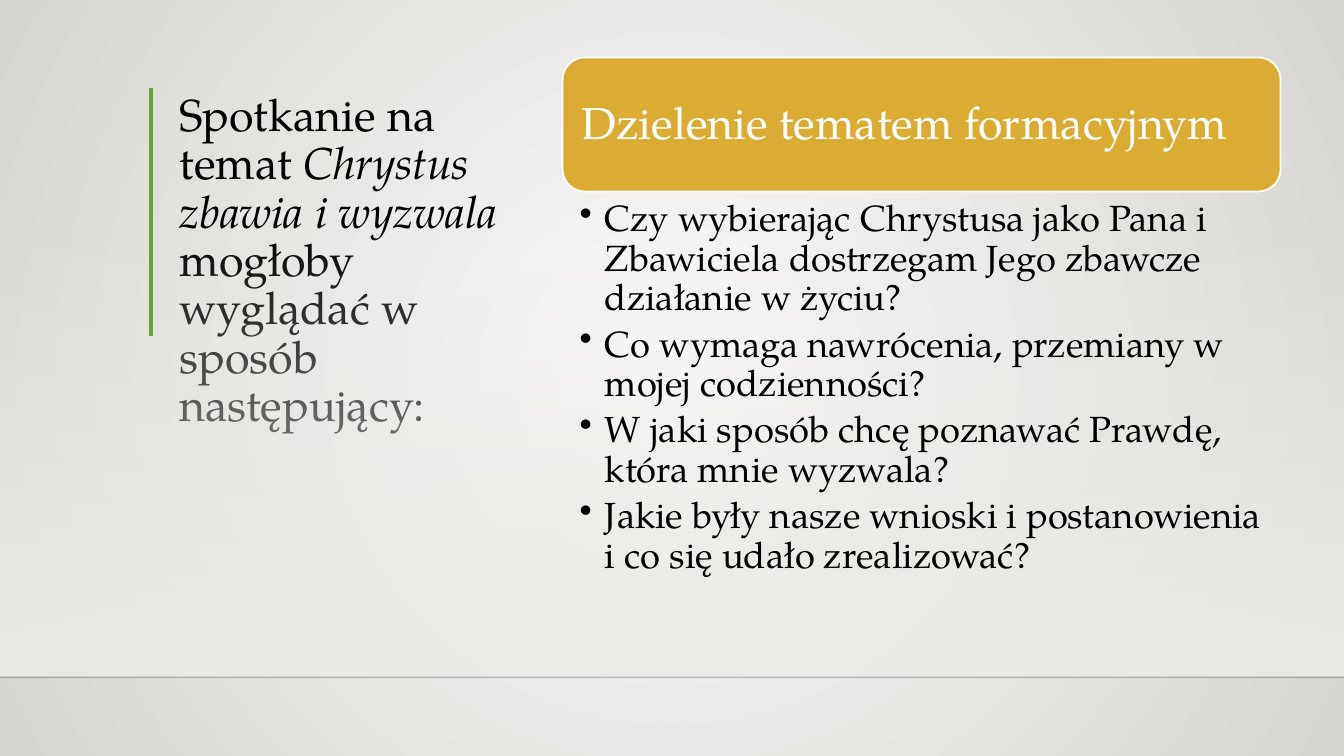
from lxml import etree
from pptx import Presentation
from pptx.dml.color import RGBColor
from pptx.enum.shapes import MSO_CONNECTOR, MSO_SHAPE
from pptx.enum.text import MSO_ANCHOR, MSO_AUTO_SIZE, PP_ALIGN
from pptx.oxml.ns import qn
from pptx.util import Inches, Pt

STRAIGHT = MSO_CONNECTOR.STRAIGHT
RECTANGLE, ROUNDED = MSO_SHAPE.RECTANGLE, MSO_SHAPE.ROUNDED_RECTANGLE
TOP, MIDDLE, BOTTOM = MSO_ANCHOR.TOP, MSO_ANCHOR.MIDDLE, MSO_ANCHOR.BOTTOM
NO_FIT = MSO_AUTO_SIZE.NONE
LEFT = PP_ALIGN.LEFT

WIDTH, HEIGHT = 13.33, 7.5
FLOOR = 6.72

TITLE = [
    ("Spotkanie na temat ", False),
    ("Chrystus zbawia i wyzwala", True),
    (" mogłoby wyglądać w sposób następujący:", False),
]
HEADING = "Dzielenie tematem formacyjnym"
QUESTIONS = [
    "Czy wybierając Chrystusa jako Pana i Zbawiciela dostrzegam Jego zbawcze działanie w życiu?",
    "Co wymaga nawrócenia, przemiany w mojej codzienności?",
    "W jaki sposób chcę poznawać Prawdę, która mnie wyzwala?",
    "Jakie były nasze wnioski i postanowienia i co się udało zrealizować?",
]


def color(code):
    return RGBColor.from_string(code)


def set_alpha(parent, percent):
    tone = next(parent.iter(qn("a:srgbClr")))
    etree.SubElement(tone, qn("a:alpha"), val=str(percent * 1000))


class SlideBuilder:
    font = "TeX Gyre Pagella"
    line_spacing = 0.9

    def __init__(self, page):
        self.page = page

    def gradient(self, fill, colors):
        fill.gradient()
        for stop, code in zip(fill.gradient_stops, colors):
            stop.color.rgb = color(code)

    def background(self, center, edge):
        self.gradient(self.page.background.fill, (center, edge))
        linear = next(self.page.element.iter(qn("a:lin")))
        circle = etree.Element(qn("a:path"), path="circle")
        etree.SubElement(circle, qn("a:fillToRect"), l="50000", t="50000", r="50000", b="50000")
        linear.getparent().replace(linear, circle)

    def shape(self, kind, place):
        shape = self.page.shapes.add_shape(kind, *map(Inches, place))
        shape.shadow.inherit = False
        return shape

    def fade(self, place, code):
        shape = self.shape(RECTANGLE, place)
        self.gradient(shape.fill, (code, code))
        shape.fill.gradient_angle = 270
        set_alpha(shape.element, 0)
        shape.line.fill.background()

    def panel(self, place, fill, outline, width):
        shape = self.shape(ROUNDED, place)
        shape.fill.solid()
        shape.fill.fore_color.rgb = color(fill)
        shape.line.color.rgb = color(outline)
        shape.line.width = Pt(width)

    def line(self, start, end, code, width, alpha=100):
        line = self.page.shapes.add_connector(STRAIGHT, *map(Inches, start + end))
        line.line.color.rgb = color(code)
        line.line.width = Pt(width)
        if alpha < 100:
            set_alpha(line.element, alpha)
        etree.SubElement(line.element.spPr, qn("a:effectLst"))

    def frame(self, box, anchor, insets):
        frame = box.text_frame
        frame.word_wrap = True
        frame.auto_size = NO_FIT
        frame.vertical_anchor = anchor
        frame.margin_left, frame.margin_top, frame.margin_right, frame.margin_bottom = map(Inches, insets)
        return frame

    def paragraph(self, para, spans, size, code, after=0, bullet=False):
        para.alignment = LEFT
        para.line_spacing = self.line_spacing
        para.space_before = Pt(0)
        para.space_after = Pt(after)
        if bullet:
            properties = para._p.get_or_add_pPr()
            properties.set("marL", str(Inches(0.25)))
            properties.set("indent", str(Inches(-0.25)))
            etree.SubElement(properties, qn("a:buChar"), char="•")
        for text, italic in spans:
            span = para.add_run()
            span.text = text
            span.font.name = self.font
            span.font.size = Pt(size)
            span.font.italic = italic
            span.font.color.rgb = color(code)

    def title(self, place, spans, size, code):
        box = self.page.shapes.title
        box.left, box.top, box.width, box.height = map(Inches, place)
        frame = self.frame(box, BOTTOM, (0.1, 0.05, 0.1, 0.05))
        self.paragraph(frame.paragraphs[0], spans, size, code)

    def text(self, place, lines, size, code, anchor, insets, after=0, bullet=False):
        box = self.page.shapes.add_textbox(*map(Inches, place))
        frame = self.frame(box, anchor, insets)
        for index, line in enumerate(lines):
            para = frame.add_paragraph() if index else frame.paragraphs[0]
            self.paragraph(para, [(line, False)], size, code, after, bullet)


def main():
    deck = Presentation()
    deck.slide_width, deck.slide_height = Inches(WIDTH), Inches(HEIGHT)
    builder = SlideBuilder(deck.slides.add_slide(deck.slide_layouts[5]))

    builder.background("FAFAF9", "D7D5D2")
    builder.fade((0, 2.2, WIDTH, 4.5), "EDEBE7")
    builder.line((0, FLOOR), (WIDTH, FLOOR), "000001", 1, alpha=20)
    builder.line((1.5, 0.87), (1.5, 3.33), "5FA534", 3)

    builder.title((1.68, 0.87, 3.48, 3.46), TITLE, 32, "000000")
    builder.panel((5.58, 0.57, 7.12, 1.33), "DCAB34", "FFFFFF", 1.25)
    builder.text((5.64, 0.64, 6.99, 1.2), [HEADING], 32, "FFFFFF", MIDDLE, (0.13,) * 4)
    builder.text((5.52, 1.95, 7.24, 4.86), QUESTIONS, 26, "000000", TOP,
                 (0.23, 0.04, 0.2, 0.04), after=5.2, bullet=True)

    deck.save("out.pptx")


if __name__ == "__main__":
    main()
